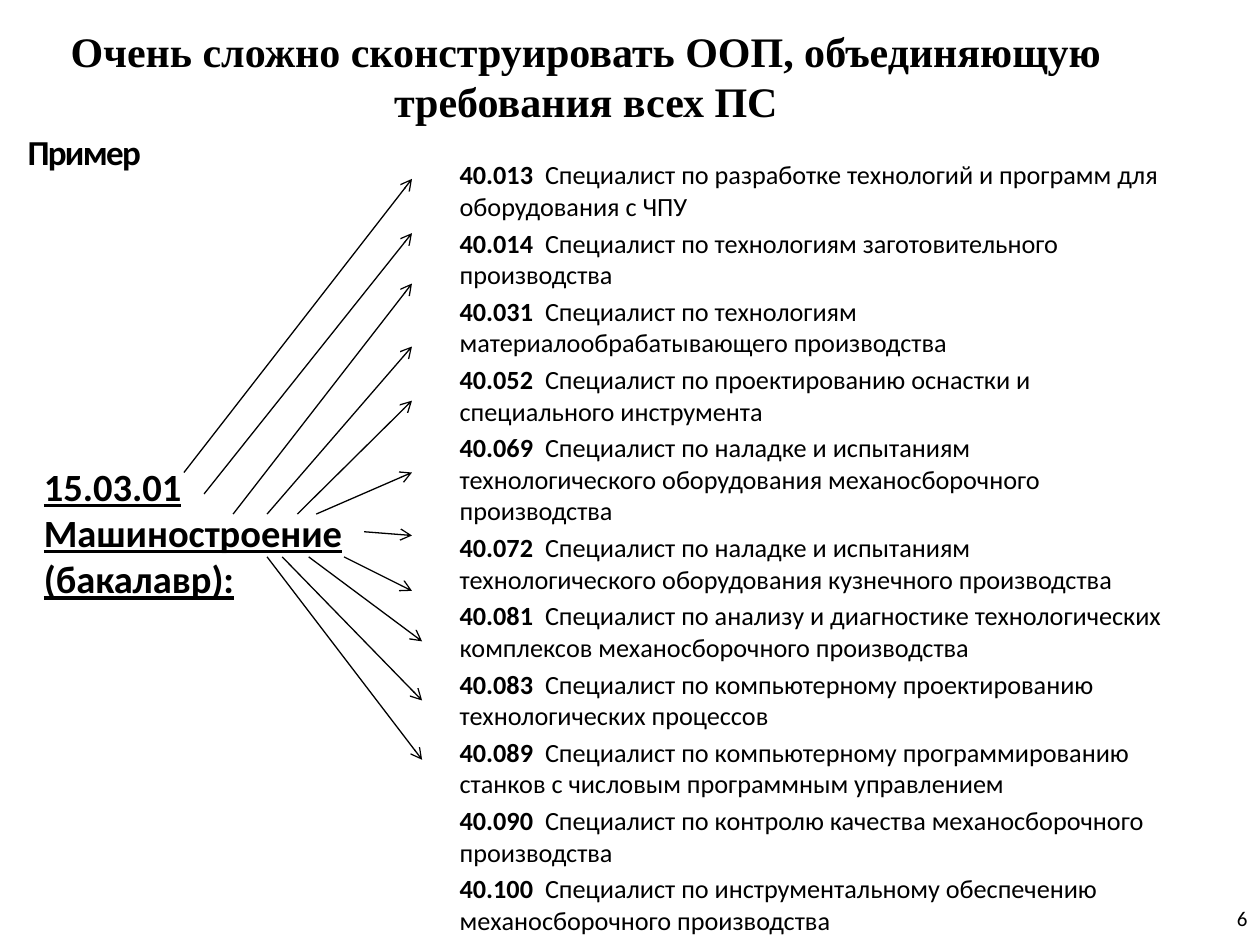
import pptx
import pptx.util
import pptx.dml.color
import pptx.enum.shapes
import pptx.enum.text
import lxml.etree

# Content
TITLE = "Очень сложно сконструировать ООП, объединяющую требования всех ПС"
SAMPLE = "Пример"
DEGREE = "15.03.01 Машиностроение (бакалавр):"
NUMBER = "6"
GAP = "  "  # a no-break space, then a plain one
JOBS = [
    ("40.013", "Специалист по разработке технологий и программ для оборудования с ЧПУ"),
    ("40.014", "Специалист по технологиям заготовительного производства"),
    ("40.031", "Специалист по технологиям материалообрабатывающего производства"),
    ("40.052", "Специалист по проектированию оснастки и специального инструмента"),
    ("40.069", "Специалист по наладке и испытаниям технологического оборудования "
               "механосборочного производства"),
    ("40.072", "Специалист по наладке и испытаниям технологического оборудования "
               "кузнечного производства"),
    ("40.081", "Специалист по анализу и диагностике технологических комплексов "
               "механосборочного производства"),
    ("40.083", "Специалист по компьютерному проектированию технологических процессов"),
    ("40.089", "Специалист по компьютерному программированию станков "
               "с числовым программным управлением"),
    ("40.090", "Специалист по контролю качества механосборочного производства"),
    ("40.100", "Специалист по инструментальному обеспечению механосборочного производства"),
]

# Places, in percent of the slide's width and height
BOX = {
    "title": (1.2, 1.73, 90.6, 12.53),
    "number": (76.7, 94.53, 23.3, 5.33),
    "sample": (1.2, 13.2, 31.5, 5.6),
    "jobs": (34.3, 16.13, 59.7, 69.6),
    "degree": (1.3, 19.6, 28.2, 73.47),
}
TOP, LOW = 54.4, 58.93  # arrows leave above and below the degree's name
NEAR, FAR = 32.7, 33.5  # where the arrows end
RAYS = [  # from x, from y, to x, to y
    (14.6, 50, NEAR, 18.93),
    (16.2, 52.27, NEAR, 24.67),
    (18.5, TOP, NEAR, 30),
    (21.2, TOP, NEAR, 36.67),
    (23.6, TOP, NEAR, 42.4),
    (25.1, TOP, NEAR, 50),
    (28.9, 56.27, NEAR, 56.67),
    (27.3, LOW, NEAR, 62.53),
    (24.5, LOW, FAR, 67.87),
    (22.4, LOW, FAR, 74.13),
    (21.2, LOW, FAR, 80.4),
]

THEME = {
    "ink": pptx.dml.color.RGBColor(0, 0, 0),
    "head": "Times New Roman",
    "body": "Calibri",
    "size": {"title": 24, "number": 12, "sample": 20, "jobs": 15, "degree": 22},
    "line": 0.75,
    "indent": 0.12,
    "before": 0.2,
}

ALIGN = pptx.enum.text.PP_ALIGN
ANCHOR = pptx.enum.text.MSO_ANCHOR

deck = pptx.Presentation()
deck.slide_width = pptx.util.Inches(10)
deck.slide_height = pptx.util.Inches(7.5)
slide = deck.slides.add_slide(deck.slide_layouts[6])


def place(spot):
    """Turn percents, x and y by turns, into slide units."""
    sides = (deck.slide_width, deck.slide_height)
    return [round(part * sides[i % 2] / 100) for i, part in enumerate(spot)]


def style(run, name, bold):
    font = run.font
    font.name = THEME["head" if name == "title" else "body"]
    font.size = pptx.util.Pt(THEME["size"][name])
    font.bold = bold
    font.color.rgb = THEME["ink"]


def write(name, rows, anchor=ANCHOR.MIDDLE, align=ALIGN.LEFT, listed=False):
    """Add a text box; each row is a list of (text, bold) runs."""
    frame = slide.shapes.add_textbox(*place(BOX[name])).text_frame
    frame.word_wrap = True
    frame.vertical_anchor = anchor
    for i, row in enumerate(rows):
        para = frame.add_paragraph() if i else frame.paragraphs[0]
        para.alignment = align
        if listed:
            para.space_before = pptx.util.Pt(THEME["before"] * THEME["size"][name])
            props = para._p.get_or_add_pPr()
            props.set("marL", str(pptx.util.Inches(THEME["indent"])))
            props.set("indent", "0")
        for text, bold in row:
            run = para.add_run()
            run.text = text
            style(run, name, bold)
    return frame


# Heading, page number and caption
write("title", [[(TITLE, True)]], align=ALIGN.CENTER)
write("number", [[(NUMBER, False)]], align=ALIGN.RIGHT)
sample = write("sample", [[(SAMPLE, True)]], ANCHOR.TOP)
sample.paragraphs[0].runs[0].font._element.set("spc", "-100")

# List of standards
rows = [[(code, True), (GAP + job, False)] for code, job in JOBS]
write("jobs", rows, ANCHOR.TOP, listed=True)

# Arrows from the degree to the standards
for ray in RAYS:
    line = slide.shapes.add_connector(
        pptx.enum.shapes.MSO_CONNECTOR.STRAIGHT, *place(ray))
    line.line.color.rgb = THEME["ink"]
    line.line.width = pptx.util.Pt(THEME["line"])
    props = line._element.spPr
    space = "{%s}" % props.nsmap["a"]
    tip = lxml.etree.SubElement(line.line._get_or_add_ln(), space + "tailEnd")
    tip.set("type", "arrow")
    lxml.etree.SubElement(props, space + "effectLst")

# Degree
degree = write("degree", [[(DEGREE, True)]], listed=True)
degree.paragraphs[0].runs[0].font.underline = True

deck.save("out.pptx")
